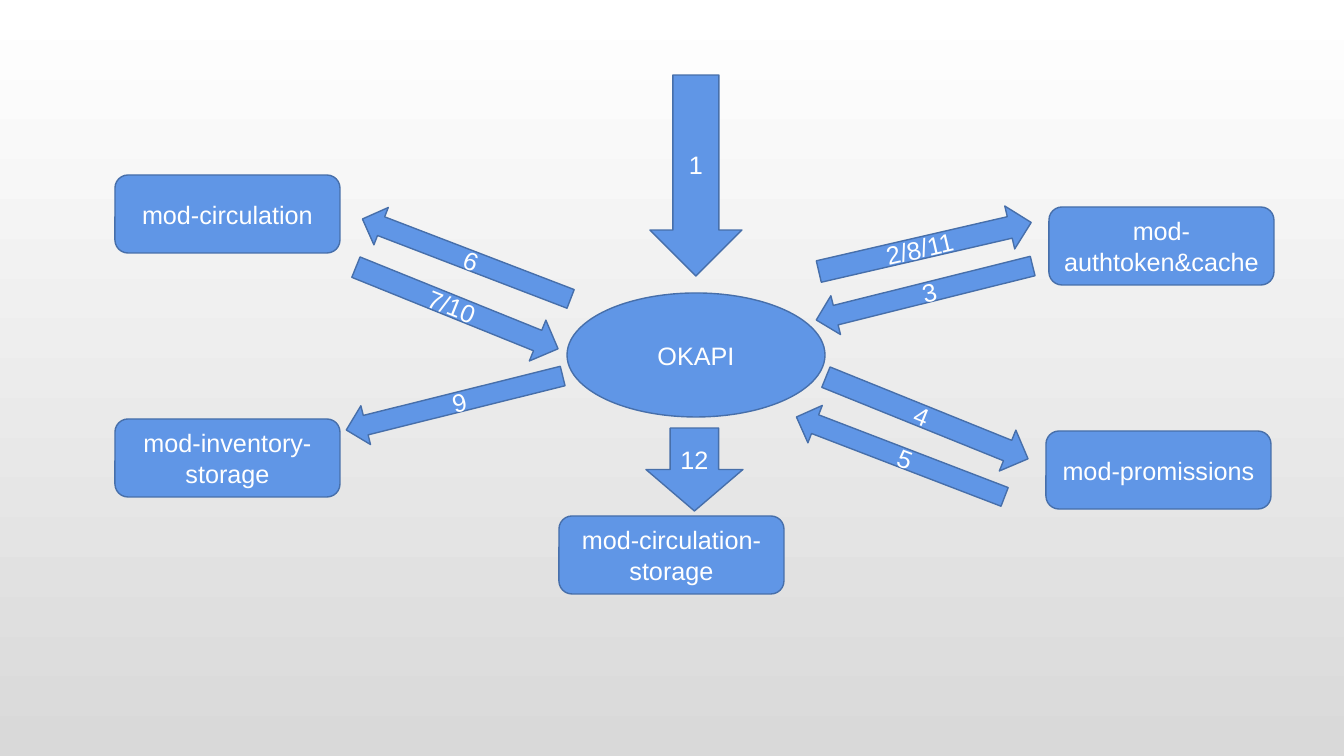
from pptx import Presentation
from pptx.dml.color import RGBColor
from pptx.enum.shapes import MSO_SHAPE as SHAPE
from pptx.enum.text import MSO_ANCHOR as ANCHOR, PP_ALIGN as ALIGN
from pptx.util import Pt

PX = 914400 / 100.8
COLORS = {"top": "FFFFFF", "bottom": "D9D9D9", "fill": "6096E6", "line": "476FAA", "text": "FFFFFF"}


def rgb(name):
    return RGBColor.from_string(COLORS[name])


def add_node(kind, text, x, y, w, h, angle=0):
    """Add a labelled shape, measured in px and turned clockwise by angle."""
    sp = slide.shapes.add_shape(kind, *(round(v * PX) for v in (x, y, w, h)))
    sp.rotation = angle
    sp.shadow.inherit = False
    sp.fill.solid()
    sp.fill.fore_color.rgb = rgb("fill")
    sp.line.color.rgb = rgb("line")
    sp.line.width = Pt(1)
    tf = sp.text_frame
    tf.word_wrap = True
    tf.vertical_anchor = ANCHOR.MIDDLE
    p = tf.paragraphs[0]
    p.text = text
    p.alignment = ALIGN.CENTER
    p.font.name = "Arial"
    p.font.size = Pt(18)
    p.font.color.rgb = rgb("text")


prs = Presentation()
prs.slide_width = round(1344 * PX)
prs.slide_height = round(756 * PX)
slide = prs.slides.add_slide(prs.slide_layouts[6])

bg = slide.background.fill
bg.gradient()
bg.gradient_angle = 270
for stop, name in zip(bg.gradient_stops, ("top", "bottom")):
    stop.color.rgb = rgb(name)

add_node(SHAPE.OVAL, "OKAPI", 567, 293, 258, 124)

modules = [
    ("mod-circulation", 115, 175),
    ("mod-circulation-storage", 559, 516),
    ("mod-inventory-storage", 115, 419),
    ("mod-authtoken&cache", 1049, 207),
    ("mod-promissions", 1046, 431),
]
for text, x, y in modules:
    add_node(SHAPE.ROUNDED_RECTANGLE, text, x, y, 225, 78)

add_node(SHAPE.DOWN_ARROW, "1", 650, 75, 92, 201)

arrow_sizes = {SHAPE.RIGHT_ARROW: (218, 44), SHAPE.LEFT_ARROW: (223, 40)}
arrows = [
    (SHAPE.RIGHT_ARROW, "2/8/11", 816, 225, 347),
    (SHAPE.RIGHT_ARROW, "4", 818, 396, 22),
    (SHAPE.LEFT_ARROW, "3", 813, 273, 346),
    (SHAPE.LEFT_ARROW, "5", 789, 437, 21),
    (SHAPE.LEFT_ARROW, "6", 355, 239, 21),
    (SHAPE.RIGHT_ARROW, "7/10", 348, 286, 22),
    (SHAPE.LEFT_ARROW, "9", 343, 383, 346),
]
for kind, text, x, y, angle in arrows:
    add_node(kind, text, x, y, *arrow_sizes[kind], angle)

add_node(SHAPE.DOWN_ARROW, "12", 646, 428, 97, 83)

prs.save("out.pptx")
